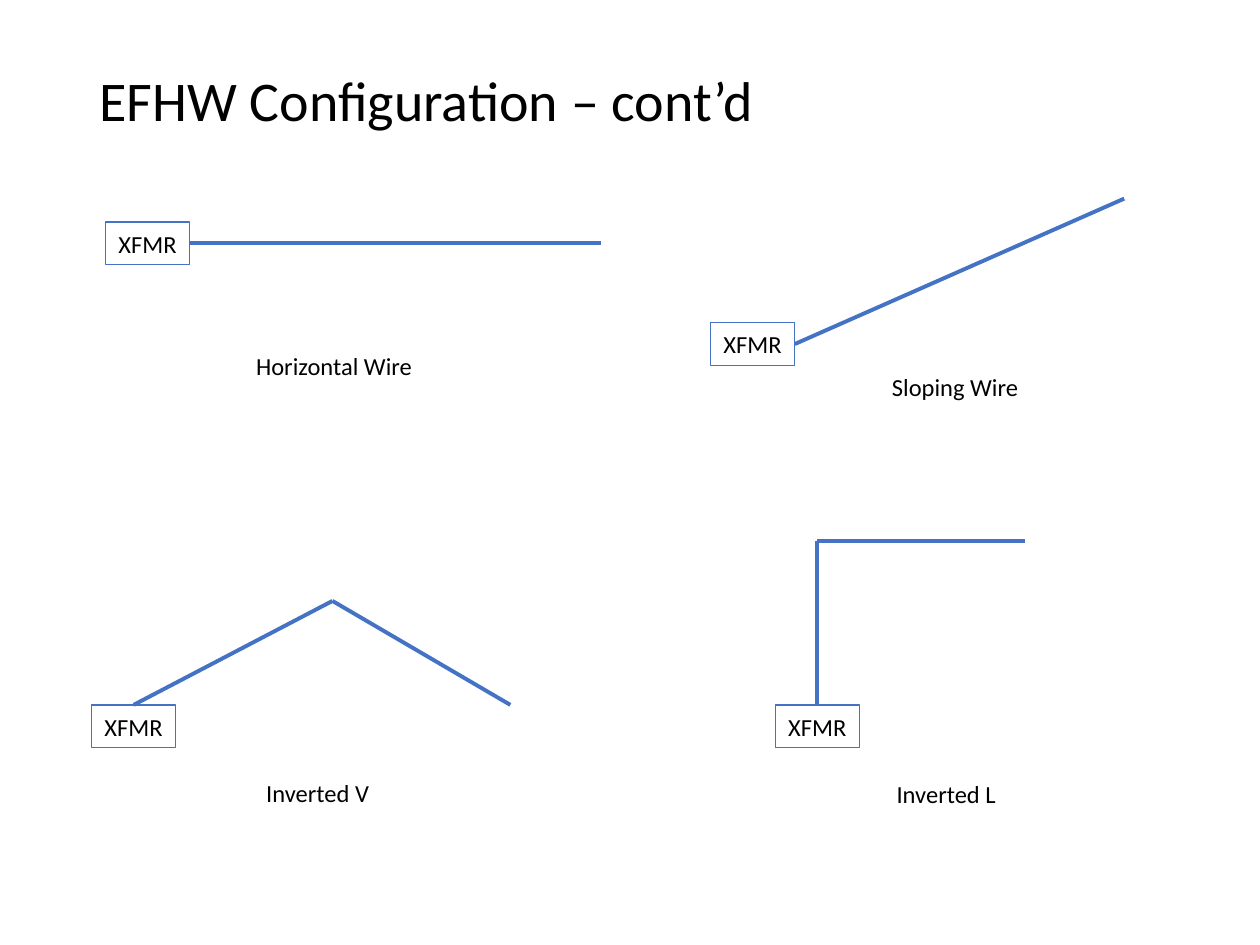
from itertools import pairwise

from lxml.etree import SubElement
from pptx import Presentation
from pptx.dml.color import RGBColor
from pptx.enum.shapes import MSO_CONNECTOR as Connector, MSO_SHAPE as Shape
from pptx.enum.text import MSO_ANCHOR as Anchor, MSO_AUTO_SIZE as AutoSize, PP_ALIGN as Align
from pptx.oxml.ns import qn
from pptx.util import Pt

TOP, RIGHT = 0, 3  # connection sites of a rectangle


def color(hex_string):
    return RGBColor.from_string(hex_string)


class AntennaSlide:
    FONT = "Calibri"
    INK = "000000"
    BLUE = "4472C4"
    TITLE_SIZE, LABEL_SIZE = 32, 14
    BOX_WIDTH, LABEL_HEIGHT = 48.2, 24.4

    def __init__(self, presentation):
        self.slide = presentation.slides.add_slide(presentation.slide_layouts[5])
        self.shapes = self.slide.shapes

    def set_text(self, shape, text, size, align):
        frame = shape.text_frame
        frame.text = text
        frame.vertical_anchor = Anchor.MIDDLE
        paragraph = frame.paragraphs[0]
        paragraph.alignment = align
        font = paragraph.runs[0].font
        font.name, font.size = self.FONT, Pt(size)
        font.color.rgb = color(self.INK)

    def title(self, text, left, top, width, height):
        heading = self.shapes.title
        heading.left, heading.top = Pt(left), Pt(top)
        heading.width, heading.height = Pt(width), Pt(height)
        self.set_text(heading, text, self.TITLE_SIZE, Align.LEFT)
        heading.text_frame.paragraphs[0].line_spacing = 0.9

    def fit_label(self, shape, text):
        """Set one unwrapped line in a shape that fits its text."""
        self.set_text(shape, text, self.LABEL_SIZE, Align.CENTER)
        shape.text_frame.word_wrap = False
        shape.text_frame.auto_size = AutoSize.SHAPE_TO_FIT_TEXT

    def caption(self, text, left, top, width):
        label = self.shapes.add_textbox(Pt(left), Pt(top), Pt(width), Pt(self.LABEL_HEIGHT))
        self.fit_label(label, text)

    def transformer(self, left, top):
        box = self.shapes.add_shape(
            Shape.RECTANGLE, Pt(left), Pt(top), Pt(self.BOX_WIDTH), Pt(self.LABEL_HEIGHT))
        box.shadow.inherit = False
        box.fill.background()
        box.line.color.rgb = color(self.BLUE)
        box.line.width = Pt(0.75)
        self.fit_label(box, "XFMR")
        return box

    def wire(self, box, side, points):
        """Run a wire from one side of the transformer through the points."""
        left, top = box.left.pt, box.top.pt
        feed = {TOP: (left + self.BOX_WIDTH / 2, top),
                RIGHT: (left + self.BOX_WIDTH, top + self.LABEL_HEIGHT / 2)}[side]
        for start, end in pairwise([feed, *points]):
            segment = self.shapes.add_connector(
                Connector.STRAIGHT, *(Pt(length) for length in (*start, *end)))
            if start is feed:
                segment.begin_connect(box, side)
            segment.line.color.rgb = color(self.BLUE)
            segment.line.width = Pt(2.25)
            SubElement(segment._element.spPr, qn("a:effectLst"))


# caption, its left, top and width; transformer corner; fed side; wire points
CONFIGURATIONS = [
    ("Horizontal Wire", (138.7, 196.8, 104.4), (60.3, 126.8), RIGHT, [(343.4, 139)]),
    ("Sloping Wire", (502.2, 208.8, 87.1), (406, 184.4), RIGHT, [(642.4, 113.5)]),
    ("Inverted V", (144.4, 440.6, 74.2), (52.3, 402.8), TOP, [(190, 343.4), (291.6, 402.8)]),
    ("Inverted L", (503.6, 441.4, 74.2), (443, 402.8), TOP, [(467.1, 309.2), (586, 309.2)]),
]


def main():
    presentation = Presentation()
    presentation.slide_width, presentation.slide_height = Pt(720), Pt(540)
    antennas = AntennaSlide(presentation)
    antennas.title("EFHW Configuration – cont’d", 49.5, 28.8, 621, 60.5)
    for name, place, corner, side, points in CONFIGURATIONS:
        box = antennas.transformer(*corner)
        antennas.wire(box, side, points)
        antennas.caption(name, *place)
    presentation.save("out.pptx")


if __name__ == "__main__":
    main()
